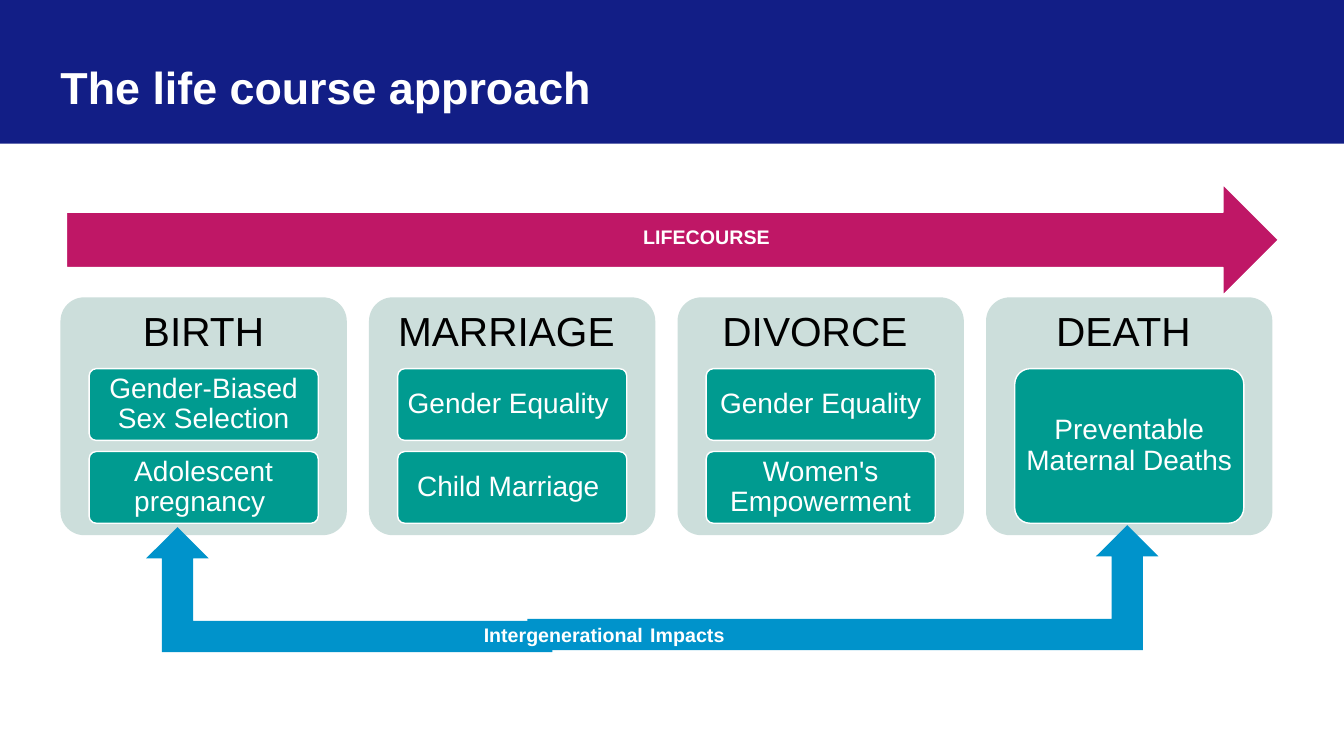
import pptx
import pptx.util
import pptx.dml.color
import pptx.enum.shapes
import pptx.enum.text

Inches = pptx.util.Inches
SHAPE = pptx.enum.shapes.MSO_SHAPE
ANCHOR = pptx.enum.text.MSO_ANCHOR
ALIGN = pptx.enum.text.PP_ALIGN

WIDTH, HEIGHT = 13.33, 7.5
COLORS = {
    "navy": "121E86", "pink": "BF1766", "mint": "CCDEDB", "teal": "009B90",
    "blue": "0093CB", "white": "FFFFFF", "black": "000000",
}
STAGES = [
    ("BIRTH", ["Gender-Biased Sex Selection", "Adolescent pregnancy "]),
    ("MARRIAGE ", ["Gender Equality ", "Child Marriage "]),
    ("DIVORCE ", ["Gender Equality", "Women's Empowerment"]),
    ("DEATH ", ["Preventable Maternal Deaths "]),
]


def rgb(name):
    return pptx.dml.color.RGBColor.from_string(COLORS[name])


def add_block(s, kind, box, fill, outlined=False):
    sp = s.shapes.add_shape(kind, *map(Inches, box))
    sp.shadow.inherit = False
    sp.fill.solid()
    sp.fill.fore_color.rgb = rgb(fill)
    if outlined:
        sp.line.color.rgb = rgb("white")
        sp.line.width = pptx.util.Pt(1)
    else:
        sp.line.fill.background()
    return sp


def set_text(sp, runs, color, insets, spacing=0.9, align=ALIGN.CENTER,
             anchor=ANCHOR.MIDDLE):
    """Write one paragraph; runs are (text, size, bold), insets left to bottom."""
    tf = sp.text_frame
    tf.word_wrap = True
    tf.auto_size = pptx.enum.text.MSO_AUTO_SIZE.NONE
    tf.vertical_anchor = anchor
    for side, inset in zip(("left", "top", "right", "bottom"), insets):
        setattr(tf, f"margin_{side}", Inches(inset))
    p = tf.paragraphs[0]
    p.alignment = align
    p.line_spacing = spacing
    for text, size, bold in runs:
        r = p.add_run()
        r.text = text
        formats = {"name": "Arial", "size": pptx.util.Pt(size), "bold": bold}
        for key, value in formats.items():
            setattr(r.font, key, value)
        r.font.color.rgb = rgb(color)


def title_band(s, box):
    title = s.shapes.title
    for key, value in zip(("left", "top", "width", "height"), box):
        setattr(title, key, Inches(value))
    title.fill.solid()
    title.fill.fore_color.rgb = rgb("navy")
    set_text(title, [("The life course approach", 32, True)], "white",
             (0.6, 0.05, 0.1, 0.3), 1.2, ALIGN.LEFT, ANCHOR.BOTTOM)


def lifecourse_arrow(s, box):
    sp = add_block(s, SHAPE.RIGHT_ARROW, box, "pink", outlined=True)
    set_text(sp, [("LIFECOURSE", 14, True)], "white", (0.97, 0, 0.02, 0.03))


def stage_card(s, box, heading, topics):
    x, y, w, h = box
    card = add_block(s, SHAPE.ROUNDED_RECTANGLE, box, "mint")
    card.adjustments[0] = 0.1
    set_text(card, [(heading, 29, False)], "black", (0, 0, 0, 0.7 * h))

    top, stack, gap = y + 0.3 * h, 0.65 * h, 0.11
    tile_h = (stack - gap * (len(topics) - 1)) / len(topics)
    for row, topic in enumerate(topics):
        tile_box = (x + 0.1 * w, top + row * (tile_h + gap), 0.8 * w, tile_h)
        tile = add_block(s, SHAPE.ROUNDED_RECTANGLE, tile_box, "teal", outlined=True)
        tile.adjustments[0] = 0.1
        set_text(tile, [(topic, 20, False)], "white", (0.06, 0.04, 0.06, 0.04))


def stage_cards(s, box):
    x, y, w, h = box
    gap = 0.22
    card_w = (w - gap * (len(STAGES) - 1)) / len(STAGES)
    for col, (heading, topics) in enumerate(STAGES):
        stage_card(s, (x + col * (card_w + gap), y, card_w, h), heading, topics)


def impact_arrows(s, box):
    x, y, w, h = box
    arrow_h = 1.24
    add_block(s, SHAPE.BENT_UP_ARROW, (x + w - 6.26, y, 6.26, arrow_h), "blue")
    birth = add_block(s, SHAPE.BENT_UP_ARROW,
                      (x, y + h - arrow_h, 4.03, arrow_h), "blue")
    birth.element.spPr.xfrm.set("flipH", "1")
    label = s.shapes.add_textbox(*map(Inches, (x + 3.25, y + 0.86, 3.37, 0.41)))
    set_text(label, [("Intergenerational", 14, True), (" ", 18, False),
                     ("Impacts", 14, True)], "white",
             (0.1, 0.05, 0.1, 0.05), 1.0, ALIGN.LEFT, ANCHOR.TOP)


def main():
    prs = pptx.Presentation()
    prs.slide_width, prs.slide_height = Inches(WIDTH), Inches(HEIGHT)
    s = prs.slides.add_slide(prs.slide_layouts[5])
    title_band(s, (0, 0, WIDTH, 0.19 * HEIGHT))
    stage_cards(s, (0.6, 2.95, 12.02, 2.36))
    lifecourse_arrow(s, (0.66, 1.83, 12.02, 1.1))
    impact_arrows(s, (1.45, 5.21, 10.04, 1.26))
    prs.save("out.pptx")


if __name__ == "__main__":
    main()
